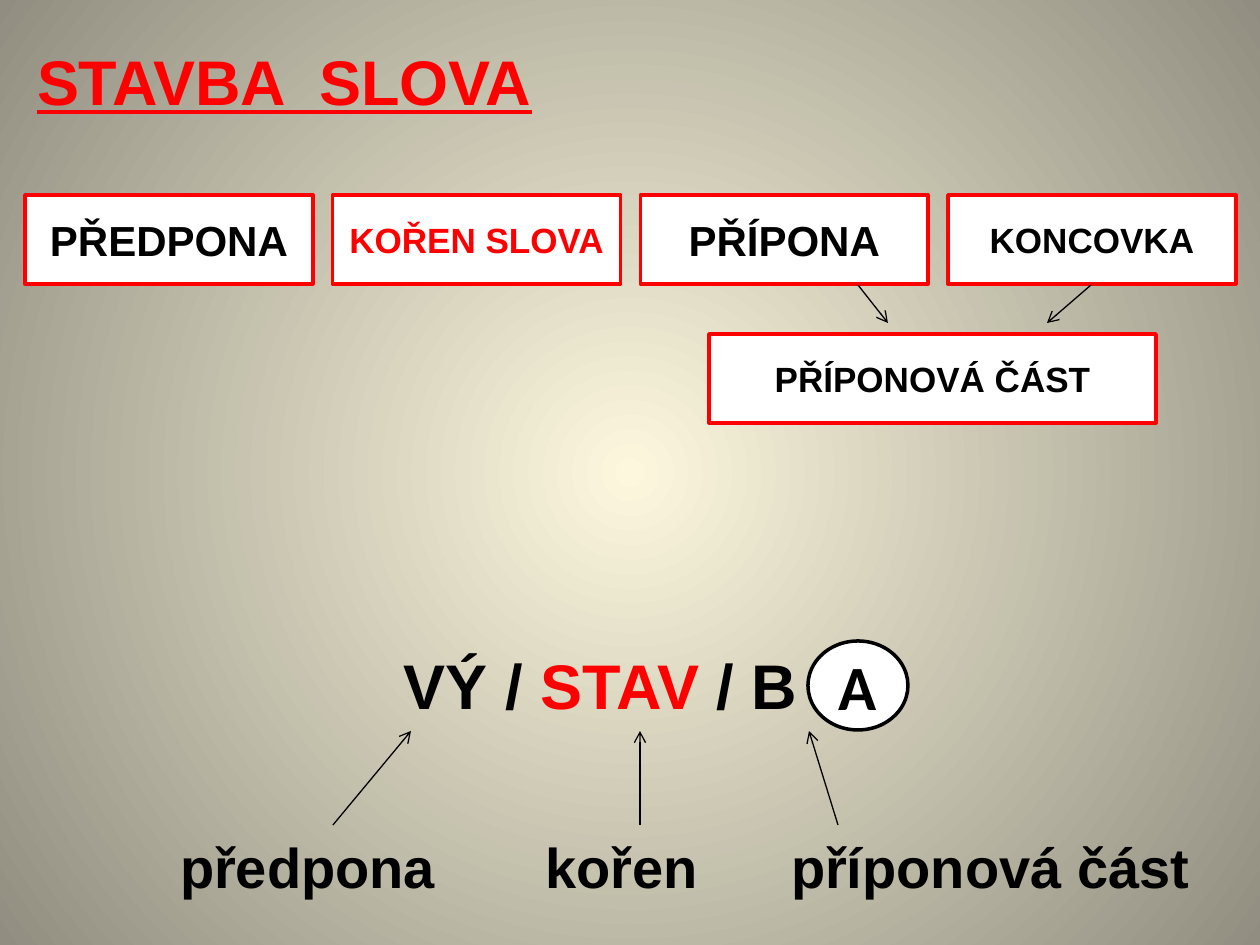
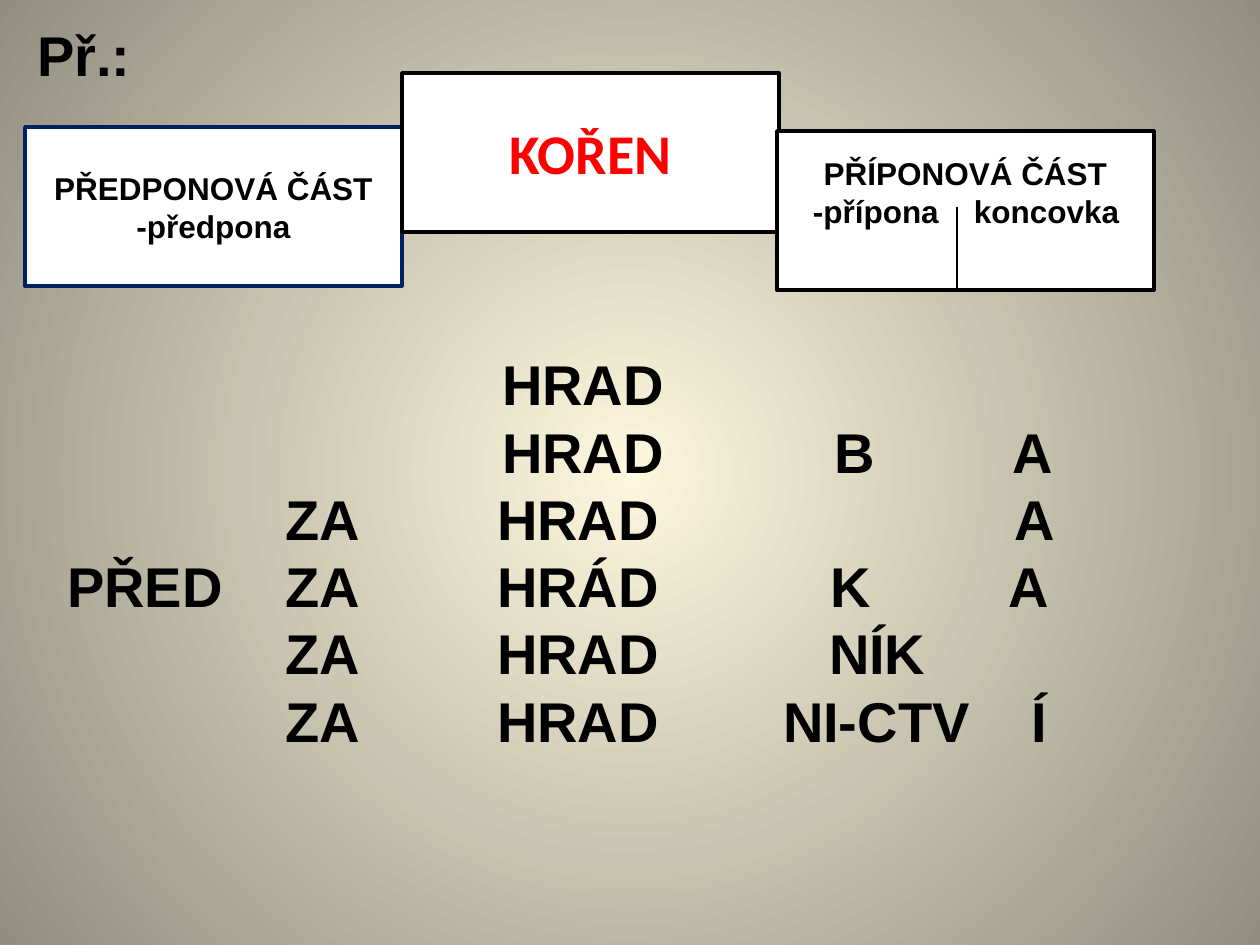
import pptx
import pptx.util
import pptx.dml.color
import pptx.enum.shapes
import pptx.enum.text
import pptx.oxml.ns
import lxml.etree
from dataclasses import dataclass


@dataclass(frozen=True)
class Theme:
    font: str = "Arial"
    alt_font: str = "Calibri"
    black: str = "000000"
    white: str = "FFFFFF"
    red: str = "FF0000"
    navy: str = "002060"
    glow: str = "FCF7DD"
    edge: str = "918E81"
    display: int = 36
    large: int = 32
    medium: int = 24
    small: int = 20
    note: int = 18
    leading: float = 1.2
    border: float = 2
    thin: float = 0.75


T = Theme()
SCALE = 914400 / 126

WORD_PARTS = [
    ("PŘEDPONA", T.medium, T.black),
    ("KOŘEN SLOVA", T.small, T.red),
    ("PŘÍPONA", T.medium, T.black),
    ("KONCOVKA", T.small, T.black),
]
FIRST_LEFT, LAST_LEFT, PART_TOP, PART_W, PART_H = 25, 948, 195, 288, 89

STRUCTURE_TITLE = [[(None, "STAVBA  SLOVA")]]
EXAMPLES_TITLE = [[(None, "Př.:")]]
SPLIT_WORD = [[(None, "VÝ / "), (None, "STAV", T.red), (None, " / B")]]
SPLIT_LABELS = [[(None, "předpona"), (545, "kořen"), (791, "příponová část")]]
STRUCTURE_ARROWS = [
    (858, 285, 888, 323),
    (1091, 285, 1047, 323),
    (333, 825, 411, 731),
    (640, 825, 640, 731),
    (838, 825, 809, 731),
]

HEADERS = [
    (25, 127, T.navy, ["PŘEDPONOVÁ ČÁST", "-předpona"], {"size": T.note}),
    (402, 73, T.black, ["KOŘEN"],
     {"size": T.large, "color": T.red, "font": T.alt_font}),
    (777, 131, T.black,
     ["PŘÍPONOVÁ ČÁST", [(813, "-přípona"), (974, "koncovka")]],
     {"size": T.note, "anchor": "TOP", "inset": 23}),
]
HEADER_W, HEADER_H = 377, 159

WORD_ROWS = [
    [(502, "HRAD")],
    [(502, "HRAD"), (834, "B"), (1012, "A")],
    [(285, "ZA"), (497, "HRAD"), (1014, "A")],
    [(None, "PŘED"), (285, "ZA"), (497, "HRÁD"), (830, "K"), (1008, "A")],
    [(285, "ZA"), (497, "HRAD"), (829, "NÍK")],
    [(285, "ZA"), (497, "HRAD"), (783, "NI-CTV"), (1031, "Í")],
]


def px(n):
    return pptx.util.Emu(round(n * SCALE))


def rgb(value):
    return pptx.dml.color.RGBColor.from_string(value)


def child(parent, tag, **attrs):
    return lxml.etree.SubElement(parent, pptx.oxml.ns.qn(tag), **attrs)


def write(sp, lines, size=T.large, color=T.black, font=T.font,
          underline=False, anchor="TOP", inset=0):
    tf = sp.text_frame
    tf.word_wrap = True
    tf.auto_size = pptx.enum.text.MSO_AUTO_SIZE.NONE
    tf.vertical_anchor = getattr(pptx.enum.text.MSO_ANCHOR, anchor)
    tf.margin_left = tf.margin_right = tf.margin_bottom = 0
    tf.margin_top = px(inset)
    for i, line in enumerate(lines):
        p = tf.add_paragraph() if i else tf.paragraphs[0]
        p.line_spacing = pptx.util.Pt(size * T.leading)
        p.space_before = p.space_after = pptx.util.Pt(0)
        centred = isinstance(line, str)
        p.alignment = getattr(pptx.enum.text.PP_ALIGN, "CENTER" if centred else "LEFT")
        cells = [(None, line)] if centred else line
        positions = [px(x) - sp.left for x, *_ in cells if x is not None]
        if positions:
            stops = child(p._p.get_or_add_pPr(), "a:tabLst")
            for position in positions:
                child(stops, "a:tab", pos=str(position), algn="l")
        for x, text, *own in cells:
            r = p.add_run()
            r.text = text if x is None else "\t" + text
            f = r.font
            f.name, f.size, f.bold, f.underline = font, pptx.util.Pt(size), True, underline
            f.color.rgb = rgb(own[0] if own else color)


def text_block(s, x, y, w, h, lines, size=T.large):
    sp = s.shapes.add_textbox(px(x), px(y), px(w), px(h))
    write(sp, lines, size=size)


def box(s, x, y, w, h, lines, border, kind="RECTANGLE", **fmt):
    shape_type = getattr(pptx.enum.shapes.MSO_SHAPE, kind)
    sp = s.shapes.add_shape(shape_type, px(x), px(y), px(w), px(h))
    sp.shadow.inherit = False
    sp.fill.solid()
    sp.fill.fore_color.rgb = rgb(T.white)
    sp.line.color.rgb = rgb(border)
    sp.line.width = pptx.util.Pt(T.border)
    write(sp, lines, **{"anchor": "MIDDLE", **fmt})


def connector(s, x1, y1, x2, y2, arrow=True):
    c = s.shapes.add_connector(pptx.enum.shapes.MSO_CONNECTOR.STRAIGHT,
                               px(x1), px(y1), px(x2), px(y2))
    c.line.color.rgb = rgb(T.black)
    c.line.width = pptx.util.Pt(T.thin)
    if arrow:
        child(c.line._get_or_add_ln(), "a:tailEnd", type="arrow")
    child(c._element.spPr, "a:effectLst")


def new_slide(prs, title, top, **fmt):
    s = prs.slides.add_slide(prs.slide_layouts[5])
    fill = s.background.fill
    fill.gradient()
    for stop, color, position in zip(fill.gradient_stops, (T.glow, T.edge), (0, 1)):
        stop.color.rgb = rgb(color)
        stop.position = position
    grad = s._element.find(".//" + pptx.oxml.ns.qn("a:gradFill"))
    grad.remove(grad.find(pptx.oxml.ns.qn("a:lin")))
    radial = child(grad, "a:path", path="circle")
    child(radial, "a:fillToRect", **dict.fromkeys("ltrb", "50000"))
    sp = s.shapes.title
    sp.left, sp.top, sp.width, sp.height = px(37), px(top), px(600), px(80)
    write(sp, title, **fmt)
    return s


def build_structure(prs):
    s = new_slide(prs, STRUCTURE_TITLE, 42,
                  size=T.display, color=T.red, underline=True)
    step = (LAST_LEFT - FIRST_LEFT) / (len(WORD_PARTS) - 1)
    for i, (name, size, color) in enumerate(WORD_PARTS):
        box(s, FIRST_LEFT + i * step, PART_TOP, PART_W, PART_H, [name], T.red,
            size=size, color=color)
    box(s, 709, 334, 447, PART_H, ["PŘÍPONOVÁ ČÁST"], T.red, size=T.small)
    text_block(s, 404, 646, 404, 80, SPLIT_WORD, T.display)
    box(s, 808, 641, 100, PART_H, ["A"], T.black, kind="OVAL",
        size=T.display, font=T.alt_font)
    text_block(s, 180, 833, 1040, 80, SPLIT_LABELS)
    for ends in STRUCTURE_ARROWS:
        connector(s, *ends)


def build_examples(prs):
    s = new_slide(prs, EXAMPLES_TITLE, 21)
    text_block(s, 67, 350, 1100, 404, WORD_ROWS)
    for x, y, border, lines, fmt in HEADERS:
        box(s, x, y, HEADER_W, HEADER_H, lines, border, **fmt)
    connector(s, 957, 207, 957, 290, arrow=False)


def main():
    prs = pptx.Presentation()
    prs.slide_width, prs.slide_height = px(1260), px(945)
    build_structure(prs)
    build_examples(prs)
    prs.save("out.pptx")


if __name__ == "__main__":
    main()
